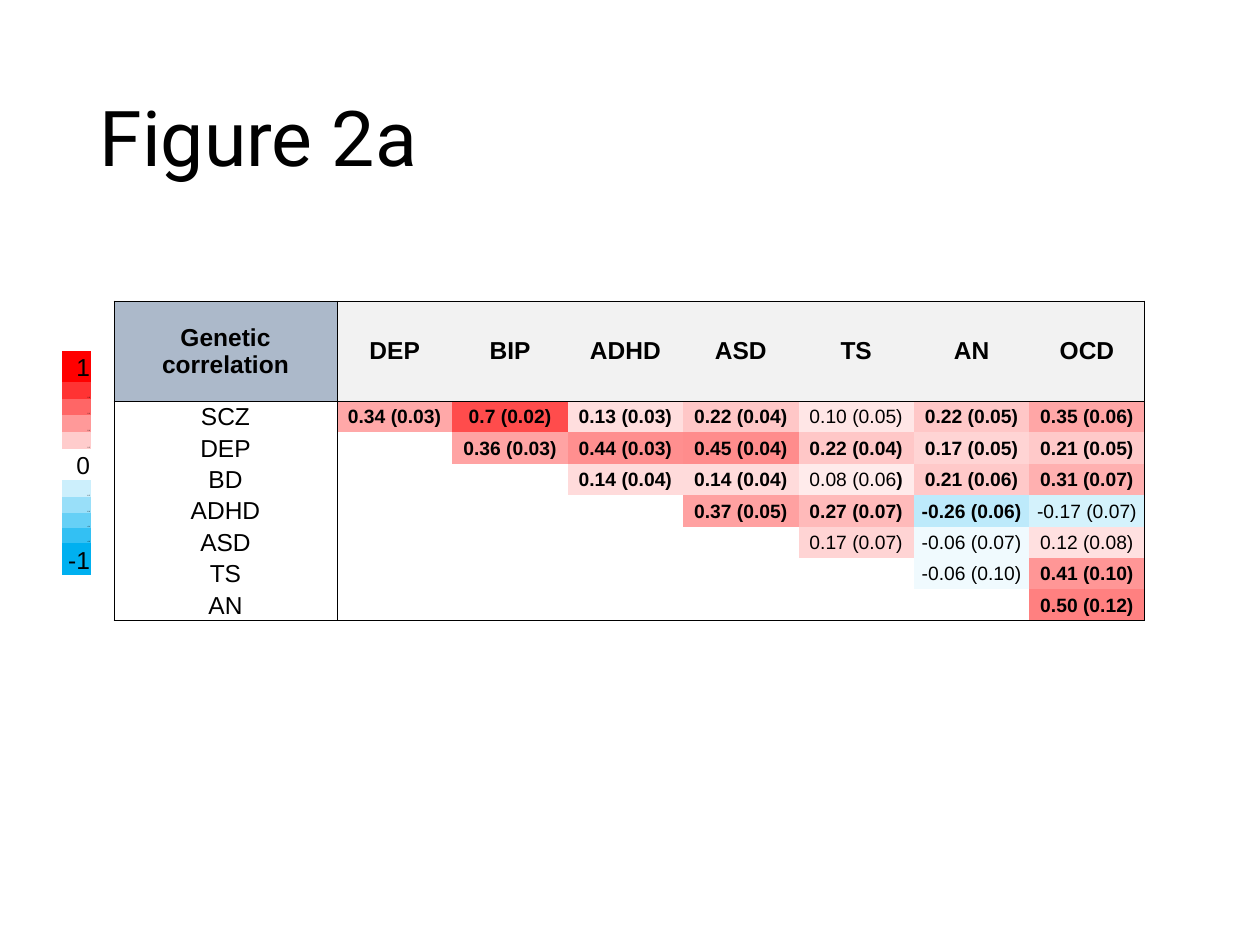
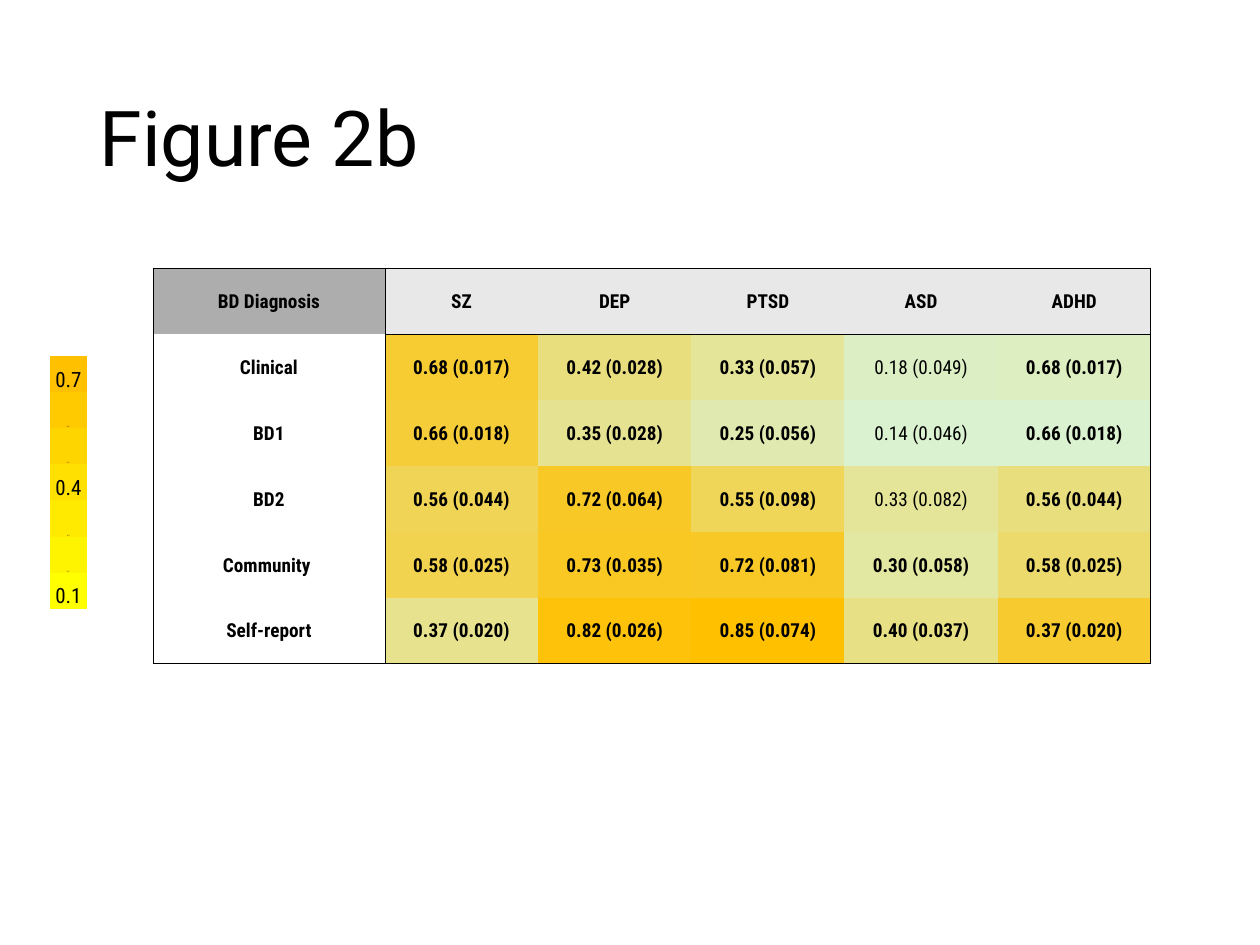
import pptx
import pptx.util
import pptx.dml.color
import pptx.enum.text
import pptx.oxml.ns
from lxml import etree

PX = 914400 // 126
ALIGN = pptx.enum.text.PP_ALIGN
ANCHOR = pptx.enum.text.MSO_ANCHOR
COLOURS = {"ink": "000000", "white": "FFFFFF", "red": "FF0000", "blue": "00B0F0",
           "slate": "ACB9CA", "mist": "F2F2F2", "grey": "ADADAD", "silver": "E8E8E8",
           "mint": "DAF2D0", "amber": "FFC000", "yellow": "FFFF00"}
TITLE_BOX = {"left": 87, "top": 50, "width": 1086, "height": 183}
INSETS = {"margin_left": PX, "margin_right": PX, "margin_top": PX, "margin_bottom": 0}
CORRELATION_SCALE = [(-1, "blue"), (0, "white"), (1, "red")]

FIGURES = [
    {
        "title": "Figure 2a",
        "heatmap": {
            "box": (114, 301, 1031, 320), "first_column": 223, "header_height": 100,
            "corner_fill": "slate", "header_fill": "mist", "corner_rule": True,
            "font": "Arial", "label_size": 14, "value_size": 11,
            "scale": CORRELATION_SCALE,
            "rows": [
                "Genetic correlation|DEP|BIP|ADHD|ASD|TS|AN|OCD",
                "~SCZ|0.34 (0.03)|0.7 (0.02)|0.13 (0.03)|0.22 (0.04)|~0.10 (0.05)|0.22 (0.05)|0.35 (0.06)",
                "~DEP||0.36 (0.03)|0.44 (0.03)|0.45 (0.04)|0.22 (0.04)|0.17 (0.05)|0.21 (0.05)",
                "~BD|||0.14 (0.04)|0.14 (0.04)|~0.08 (0.06~)|0.21 (0.06)|0.31 (0.07)",
                "~ADHD||||0.37 (0.05)|0.27 (0.07)|-0.26 (0.06)|~-0.17 (0.07)",
                "~ASD|||||~0.17 (0.07)|~-0.06 (0.07)|~0.12 (0.08)",
                "~TS||||||~-0.06 (0.10)|0.41 (0.10)",
                "~AN|||||||0.50 (0.12)",
            ],
            "last_column_shades": [],
        },
        "legend": {
            "box": (62, 298, 29, 311),
            "heights": [53, 31, 17, 16, 17, 17, 31, 17, 16, 15, 15, 32, 34],
            "labels": ["", "1", "0.8", "0.6", "0.4", "0.2", "0",
                       "-0.2", "-0.4", "-0.6", "-0.8", "-1", ""],
            "shown": {"1", "0", "-1"}, "size": 14, "align": ALIGN.RIGHT,
            "font": "Arial", "other_fonts": {"-0.6": "Calibri", "-0.8": "Calibri"},
            "scale": CORRELATION_SCALE,
        },
    },
    {
        "title": "Figure 2b",
        "heatmap": {
            "box": (153, 268, 998, 396), "first_column": 232, "header_height": 66,
            "corner_fill": "grey", "header_fill": "silver", "corner_rule": False,
            "font": "Roboto Condensed", "label_size": 11, "value_size": 11,
            "scale": [(0.14, "mint"), (0.85, "amber")],
            "rows": [
                "BD Diagnosis|SZ|DEP|PTSD|ASD|ADHD",
                "Clinical|0.68 (0.017)|0.42 (0.028)|0.33 (0.057)|~0.18 (0.049)|0.68 (0.017)",
                "BD1|0.66 (0.018)|0.35 (0.028)|0.25 (0.056)|~0.14 (0.046)|0.66 (0.018)",
                "BD2|0.56 (0.044)|0.72 (0.064)|0.55 (0.098)|~0.33 (0.082)|0.56 (0.044)",
                "Community |0.58 (0.025)|0.73 (0.035)|0.72 (0.081)|0.30 (0.058)|0.58 (0.025)",
                "Self-report|0.37 (0.020)|0.82 (0.026)|0.85 (0.074)|0.40 (0.037)|0.37 (0.020)",
            ],
            "last_column_shades": [0.19, 0.14, 0.42, 0.48, 0.69],
        },
        "legend": {
            "box": (50, 356, 37, 253),
            "heights": [253 / 7] * 7,
            "labels": ["0.7", "0.6", "0.5", "0.4", "0.3", "0.2", "0.1"],
            "shown": {"0.7", "0.4", "0.1"}, "size": 12, "align": ALIGN.CENTER,
            "font": "Roboto Condensed", "other_fonts": {},
            "scale": [(0.1, "yellow"), (0.7, "amber")],
        },
    },
]


def apply(target, values):
    for name, value in values.items():
        setattr(target, name, value)


def rgb(hex_text):
    return pptx.dml.color.RGBColor.from_string(hex_text)


def shade(value, scale):
    for (low, low_name), (high, high_name) in zip(scale, scale[1:]):
        if value <= high:
            break
    share = (value - low) / (high - low)
    pairs = zip(rgb(COLOURS[low_name]), rgb(COLOURS[high_name]))
    return "".join(f"{round(start + (end - start) * share):02X}" for start, end in pairs)


def format_span(span, font, size, bold=False):
    apply(span.font, {"name": font, "size": pptx.util.Pt(size), "bold": bold})
    span.font.color.rgb = rgb(COLOURS["ink"])


def draw_borders(cell, sides):
    properties = cell._tc.get_or_add_tcPr()
    for side in "LRTB":
        line = etree.SubElement(properties, pptx.oxml.ns.qn(f"a:ln{side}"))
        if side in sides:
            line.set("w", str(pptx.util.Pt(0.5)))
            fill = etree.SubElement(line, pptx.oxml.ns.qn("a:solidFill"))
            etree.SubElement(fill, pptx.oxml.ns.qn("a:srgbClr"), val=COLOURS["ink"])
        else:
            etree.SubElement(line, pptx.oxml.ns.qn("a:noFill"))


def fill_cell(cell, text, fill, font, size, align, anchor, sides=""):
    draw_borders(cell, sides)
    apply(cell, {**INSETS, "vertical_anchor": anchor})
    if fill:
        cell.fill.solid()
        cell.fill.fore_color.rgb = rgb(fill)
    else:
        cell.fill.background()
    para = cell.text_frame.paragraphs[0]
    para.alignment = align
    for position, part in enumerate(text.split("~")):
        if part:
            span = para.add_run()
            span.text = part
            format_span(span, font, size, bold=position % 2 == 0)
    if not text:
        para._p.get_or_add_endParaRPr().set("sz", str(size * 100))


def add_grid(page, box, widths, heights):
    frame = page.shapes.add_table(len(heights), len(widths), *(length * PX for length in box))
    grid = frame.table
    apply(grid, {"first_row": False, "horz_banding": False})
    for column, width in zip(grid.columns, widths):
        column.width = round(width * PX)
    for row, height in zip(grid.rows, heights):
        row.height = round(height * PX)
    return grid


def spread(first, total, count):
    return [first] + [(total - first) / (count - 1)] * (count - 1)


def border_sides(row, column, last_row, last_column, corner_rule):
    ruled = column > 0 or corner_rule
    tests = {"L": column in (0, 1), "R": column in (0, last_column),
             "T": row == 0 or (row == 1 and ruled),
             "B": row == last_row or (row == 0 and ruled)}
    return "".join(side for side, drawn in tests.items() if drawn)


def add_heatmap(page, box, spec_values):
    rows = [line.split("|") for line in spec_values["rows"]]
    last_row, last_column = len(rows) - 1, len(rows[0]) - 1
    grid = add_grid(page, box,
                    spread(spec_values["first_column"], box[2], len(rows[0])),
                    spread(spec_values["header_height"], box[3], len(rows)))
    shades = spec_values["last_column_shades"]
    for row, texts in enumerate(rows):
        for column, text in enumerate(texts):
            is_label = row == 0 or column == 0
            if row == 0:
                fill = COLOURS[spec_values["header_fill" if column else "corner_fill"]]
            elif column == 0 or not text:
                fill = None
            elif shades and column == last_column:
                fill = shade(shades[row - 1], spec_values["scale"])
            else:
                fill = shade(float(text.strip("~").split()[0]), spec_values["scale"])
            fill_cell(grid.cell(row, column), text, fill, spec_values["font"],
                      spec_values["label_size" if is_label else "value_size"],
                      ALIGN.CENTER, ANCHOR.MIDDLE,
                      border_sides(row, column, last_row, last_column,
                                   spec_values["corner_rule"]))


def add_legend(page, box, legend):
    grid = add_grid(page, box, [box[2]], legend["heights"])
    for row, label in enumerate(legend["labels"]):
        fill_cell(grid.cell(row, 0), f"~{label}" if label else "",
                  shade(float(label), legend["scale"]) if label else None,
                  legend["other_fonts"].get(label, legend["font"]),
                  legend["size"] if label in legend["shown"] else 1,
                  legend["align"], ANCHOR.BOTTOM)


def add_title(page, text):
    title = page.shapes.title
    apply(title, {name: length * PX for name, length in TITLE_BOX.items()})
    title.text_frame.vertical_anchor = ANCHOR.MIDDLE
    para = title.text_frame.paragraphs[0]
    apply(para, {"alignment": ALIGN.LEFT, "line_spacing": 0.9})
    span = para.add_run()
    span.text = text
    format_span(span, "Roboto", 44)


def add_figure(deck, figure):
    page = deck.slides.add_slide(deck.slide_layouts[5])
    add_title(page, figure["title"])
    add_legend(page, figure["legend"]["box"], figure["legend"])
    add_heatmap(page, figure["heatmap"]["box"], figure["heatmap"])


def main():
    deck = pptx.Presentation()
    apply(deck, {"slide_width": 1260 * PX, "slide_height": 945 * PX})
    for figure in FIGURES:
        add_figure(deck, figure)
    deck.save("out.pptx")


if __name__ == "__main__":
    main()
